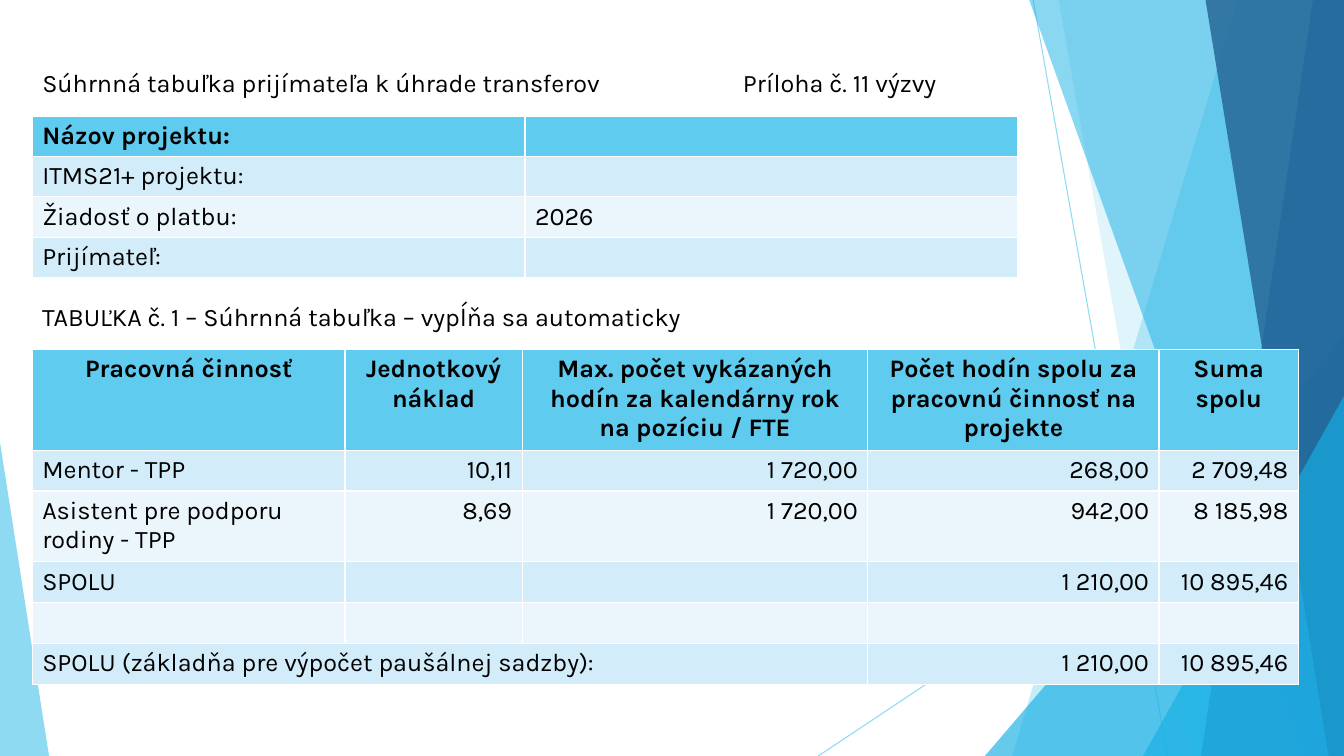
from lxml import etree
from pptx import Presentation
from pptx.dml.color import RGBColor
from pptx.enum.shapes import MSO_CONNECTOR, MSO_SHAPE
from pptx.enum.text import MSO_ANCHOR, MSO_AUTO_SIZE, PP_ALIGN
from pptx.oxml.ns import qn
from pptx.util import Pt

LEFT, CENTER, RIGHT = PP_ALIGN.LEFT, PP_ALIGN.CENTER, PP_ALIGN.RIGHT
TOP, NO_FIT = MSO_ANCHOR.TOP, MSO_AUTO_SIZE.NONE
TRIANGLE, STRAIGHT = MSO_SHAPE.ISOSCELES_TRIANGLE, MSO_CONNECTOR.STRAIGHT
BLACK = RGBColor(0x00, 0x00, 0x00)
SKY = RGBColor(0x5F, 0xCB, 0xEF)
CYAN = RGBColor(0x17, 0xB0, 0xE4)
BLUE = RGBColor(0x2E, 0x83, 0xC3)
NAVY = RGBColor(0x22, 0x62, 0x92)
BAND_DARK = RGBColor(0xD2, 0xEC, 0xF9)
BAND_LIGHT = RGBColor(0xEA, 0xF6, 0xFC)
W, H = 960, 540
MARGIN = 23


def set_alpha(sp, percent):
    for clr in sp.element.iter(qn("a:srgbClr")):
        etree.SubElement(clr, qn("a:alpha")).set("val", str(percent * 1000))


def write(p, text, align=LEFT, bold=False):
    p.alignment = align
    r = p.add_run()
    r.text = text
    r.font.name = "Karla"
    r.font.size = Pt(18)
    r.font.bold = bold
    r.font.color.rgb = BLACK


prs = Presentation()
prs.slide_width, prs.slide_height = Pt(W), Pt(H)
s = prs.slides.add_slide(prs.slide_layouts[5])

for x1, y1, x2, y2 in [(738, 0, 834, H), (W, 290, 584.5, H)]:
    line = s.shapes.add_connector(STRAIGHT, Pt(x1), Pt(y1), Pt(x2), Pt(y2))
    line.line.color.rgb = SKY
    line.line.width = Pt(0.75)
    set_alpha(line, 70)
    etree.SubElement(line.element.spPr, qn("a:effectLst"))

facets = [
    (SKY, 36, (884, 723)),
    (SKY, 20, (756, 852)),
    (CYAN, 66, (703.5, 240, 256.5, 300, 1)),
    (CYAN, 50, (735, 929.5)),
    (BLUE, 70, (938, 858)),
    (NAVY, 80, (861, 949)),
    (CYAN, 66, (816.5, 283, 143.5, 257, 1)),
    (SKY, 70, (0, 316, 35, 224, 0)),
]
for color, alpha, geometry in facets:
    if len(geometry) == 2:
        top_x, bottom_x = geometry
        fb = s.shapes.build_freeform(Pt(top_x), Pt(-0.6))
        corners = [(W, -0.6), (W, H), (bottom_x, H)]
        fb.add_line_segments([(Pt(x), Pt(y)) for x, y in corners])
        sp = fb.convert_to_shape()
    else:
        *box, apex = geometry
        sp = s.shapes.add_shape(TRIANGLE, *[Pt(v) for v in box])
        sp.adjustments[0] = apex
    sp.fill.solid()
    sp.fill.fore_color.rgb = color
    sp.line.fill.background()
    sp.shadow.inherit = False
    set_alpha(sp, alpha)

title = s.shapes.title
s.shapes.element.append(title.element)
caption = s.shapes.add_textbox(Pt(MARGIN), Pt(212), Pt(782), Pt(29))
title.left, title.top, title.width, title.height = Pt(MARGIN), Pt(44.5), Pt(713), Pt(29)
for sp, text in [
    (title, "Súhrnná tabuľka prijímateľa k úhrade transferov\tPríloha č. 11 výzvy"),
    (caption, "TABUĽKA č. 1 – Súhrnná tabuľka – vypĺňa sa automaticky"),
]:
    tf = sp.text_frame
    tf.word_wrap = True
    tf.auto_size = NO_FIT
    tf.vertical_anchor = TOP
    write(tf.paragraphs[0], text)
tabs = etree.SubElement(title.text_frame.paragraphs[0]._p.get_or_add_pPr(), qn("a:tabLst"))
etree.SubElement(tabs, qn("a:tab"), pos=str(Pt(500.5)), algn="l")

project_rows = [
    ["Názov projektu:", ""],
    ["ITMS21+ projektu:", ""],
    ["Žiadosť o platbu:", "2026"],
    ["Prijímateľ:", ""],
]
summary_rows = [
    ["Pracovná činnosť", "Jednotkový náklad",
     "Max. počet vykázaných hodín za kalendárny rok na pozíciu / FTE",
     "Počet hodín spolu za pracovnú činnosť na projekte", "Suma spolu"],
    ["Mentor - TPP", "10,11", "1 720,00", "268,00", "2 709,48"],
    ["Asistent pre podporu rodiny - TPP", "8,69", "1 720,00", "942,00", "8 185,98"],
    ["SPOLU", "", "", "1 210,00", "10 895,46"],
    ["", "", "", "", ""],
    ["SPOLU (základňa pre výpočet paušálnej sadzby):", "", "", "1 210,00", "10 895,46"],
]
tables = [
    (83, project_rows, [352, 352], [28.8] * 4, LEFT, LEFT),
    (249.5, summary_rows, [223.5, 126.5, 247, 208, 99.5],
     [72, 29.2, 50.6, 29.2, 29.2, 29.2], CENTER, RIGHT),
]
for top, rows, widths, heights, head_align, value_align in tables:
    table = s.shapes.add_table(len(rows), len(widths), Pt(MARGIN), Pt(top),
                               Pt(sum(widths)), Pt(sum(heights))).table
    for col, width in zip(table.columns, widths):
        col.width = Pt(width)
    for i, (row, height) in enumerate(zip(rows, heights)):
        table.rows[i].height = Pt(height)
        for j, text in enumerate(row):
            cell = table.cell(i, j)
            cell.fill.solid()
            if i == 0:
                cell.fill.fore_color.rgb = SKY
                align = head_align
            else:
                cell.fill.fore_color.rgb = BAND_DARK if i % 2 else BAND_LIGHT
                align = value_align if j else LEFT
            write(cell.text_frame.paragraphs[0], text, align, i == 0)
table.cell(5, 0).merge(table.cell(5, 2))

prs.save("out.pptx")
